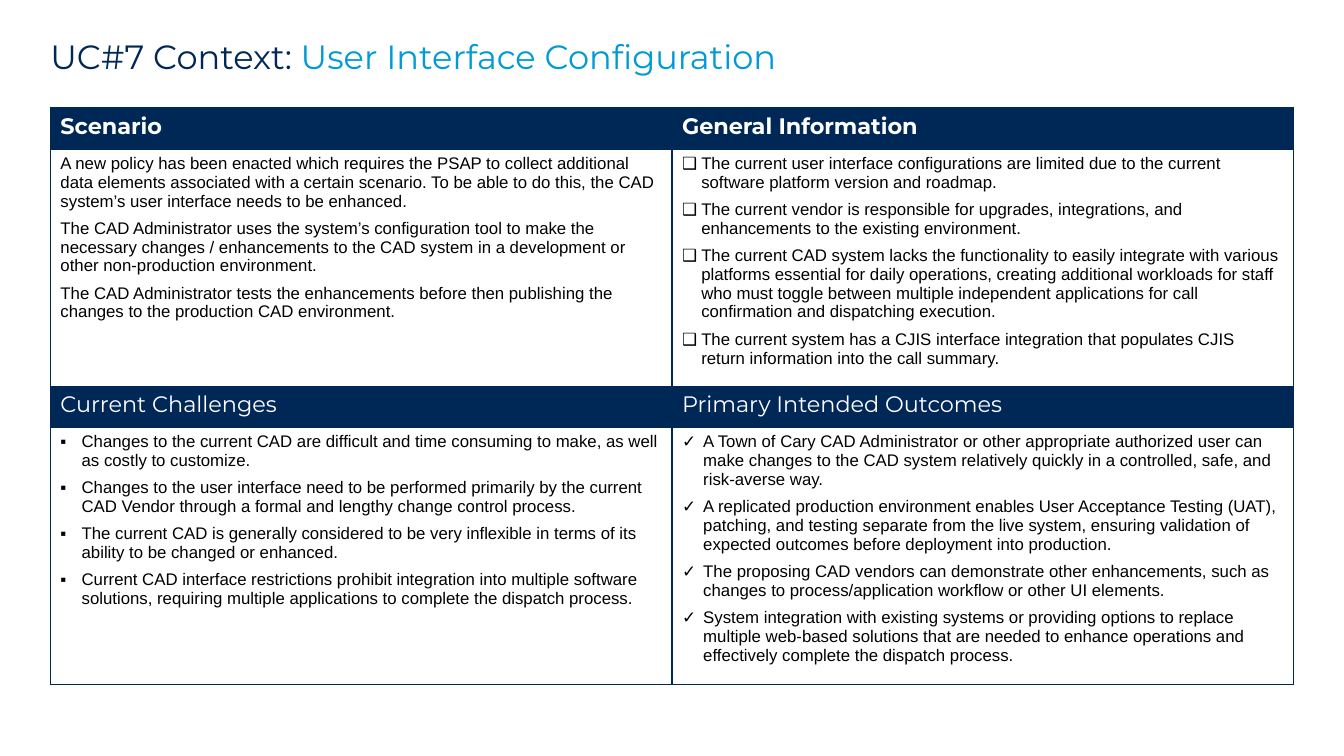
import pptx
import pptx.util
import pptx.dml.color
import pptx.oxml
import pptx.oxml.ns
from lxml import etree
from pptx.util import Inches

NAVY, BLUE, WHITE, BLACK = "002856", "009AD7", "FFFFFF", "000000"

TITLE = [("UC#7 Context: ", NAVY), ("User Interface Configuration", BLUE)]

# heading, bullet, indent in inches, paragraphs
SCENARIO = ("Scenario", None, 0, [
    "A new policy has been enacted which requires the PSAP to collect additional data elements associated with a certain scenario. To be able to do this, the CAD system’s user interface needs to be enhanced.",
    "The CAD Administrator uses the system’s configuration tool to make the necessary changes / enhancements to the CAD system in a development or other non-production environment.",
    "The CAD Administrator tests the enhancements before then publishing the changes to the production CAD environment.",
])
GENERAL = ("General Information", "❑", 0.19, [
    "The current user interface configurations are limited due to the current software platform version and roadmap.",
    "The current vendor is responsible for upgrades, integrations, and enhancements to the existing environment.",
    "The current CAD system lacks the functionality to easily integrate with various platforms essential for daily operations, creating additional workloads for staff who must toggle between multiple independent applications for call confirmation and dispatching execution.",
    "The current system has a CJIS interface integration that populates CJIS return information into the call summary.",
])
CHALLENGES = ("Current Challenges", "▪", 0.21, [
    "Changes to the current CAD are difficult and time consuming to make, as well as costly to customize.",
    "Changes to the user interface need to be performed primarily by the current CAD Vendor through a formal and lengthy change control process.",
    "The current CAD is generally considered to be very inflexible in terms of its ability to be changed or enhanced.",
    "Current CAD interface restrictions prohibit integration into multiple software solutions, requiring multiple applications to complete the dispatch process.",
])
OUTCOMES = ("Primary Intended Outcomes", "✓", 0.21, [
    "A Town of Cary CAD Administrator or other appropriate authorized user can make changes to the CAD system relatively quickly in a controlled, safe, and risk-averse way.",
    "A replicated production environment enables User Acceptance Testing (UAT), patching, and testing separate from the live system, ensuring validation of expected outcomes before deployment into production.",
    "The proposing CAD vendors can demonstrate other enhancements, such as changes to process/application workflow or other UI elements.",
    "System integration with existing systems or providing options to replace multiple web-based solutions that are needed to enhance operations and effectively complete the dispatch process.",
])
SECTIONS = [[SCENARIO, GENERAL], [CHALLENGES, OUTCOMES]]

LEFT, WIDTH = 0.5, 12.33
TABLE_TOP = 1.07
ROW_HEIGHTS = [0.41, 2.21, 0.41, 2.4]


def rgb(color):
    return pptx.dml.color.RGBColor.from_string(color)


def style(font, name, size, color, bold=False):
    font.name, font.size, font.bold = name, pptx.util.Pt(size), bold
    font.color.rgb = rgb(color)


def add_bullet(paragraph, bullet, indent):
    properties = paragraph._p.get_or_add_pPr()
    properties.set("marL", str(Inches(indent)))
    properties.set("indent", str(-Inches(indent)))
    etree.SubElement(properties, pptx.oxml.ns.qn("a:buFont")).set("typeface", "Arial")
    etree.SubElement(properties, pptx.oxml.ns.qn("a:buChar")).set("char", bullet)


def add_borders(cell):
    """Draw a 1 pt navy line on all four sides, ahead of the cell fill."""
    properties = cell._tc.get_or_add_tcPr()
    for position, side in enumerate(("lnL", "lnR", "lnT", "lnB")):
        properties.insert(position, pptx.oxml.parse_xml(
            f'<a:{side} {pptx.oxml.ns.nsdecls("a")} w="12700"><a:solidFill>'
            f'<a:srgbClr val="{NAVY}"/></a:solidFill></a:{side}>'))


def fill_cell(cell, texts, font, bullet=None, indent=0, fill=None):
    """Write the paragraphs of a cell; font holds name, size, colour and bold."""
    if fill:
        cell.fill.solid()
        cell.fill.fore_color.rgb = rgb(fill)
    else:
        cell.fill.background()
    add_borders(cell)
    frame = cell.text_frame
    frame.text = "\n".join(texts)
    for paragraph in frame.paragraphs:
        paragraph.space_after = pptx.util.Pt(6)
        if bullet:
            add_bullet(paragraph, bullet, indent)
        for run in paragraph.runs:
            style(run.font, *font)


def add_title(slide):
    box = slide.shapes.add_textbox(Inches(LEFT), Inches(0.4), Inches(WIDTH), Inches(0.48))
    frame = box.text_frame
    frame.word_wrap = True
    frame.margin_left = frame.margin_right = frame.margin_top = frame.margin_bottom = 0
    paragraph = frame.paragraphs[0]
    paragraph.line_spacing = 0.9
    paragraph.space_after = pptx.util.Pt(12)
    for words, color in TITLE:
        run = paragraph.add_run()
        run.text = words
        style(run.font, "Montserrat", 24, color)


def add_context_table(slide):
    table = slide.shapes.add_table(
        len(ROW_HEIGHTS), 2, Inches(LEFT), Inches(TABLE_TOP),
        Inches(WIDTH), Inches(sum(ROW_HEIGHTS))).table
    for row, height in zip(table.rows, ROW_HEIGHTS):
        row.height = Inches(height)
    for band, sections in enumerate(SECTIONS):
        for column, (heading, bullet, indent, texts) in enumerate(sections):
            fill_cell(table.cell(2 * band, column), [heading],
                      ("Montserrat", 16, WHITE, band == 0), fill=NAVY)
            fill_cell(table.cell(2 * band + 1, column), texts,
                      ("Arial", 12, BLACK), bullet, indent)


def main():
    deck = pptx.Presentation()
    deck.slide_width, deck.slide_height = Inches(13.33), Inches(7.5)
    slide = deck.slides.add_slide(deck.slide_layouts[6])
    add_title(slide)
    add_context_table(slide)
    deck.save("out.pptx")


if __name__ == "__main__":
    main()
